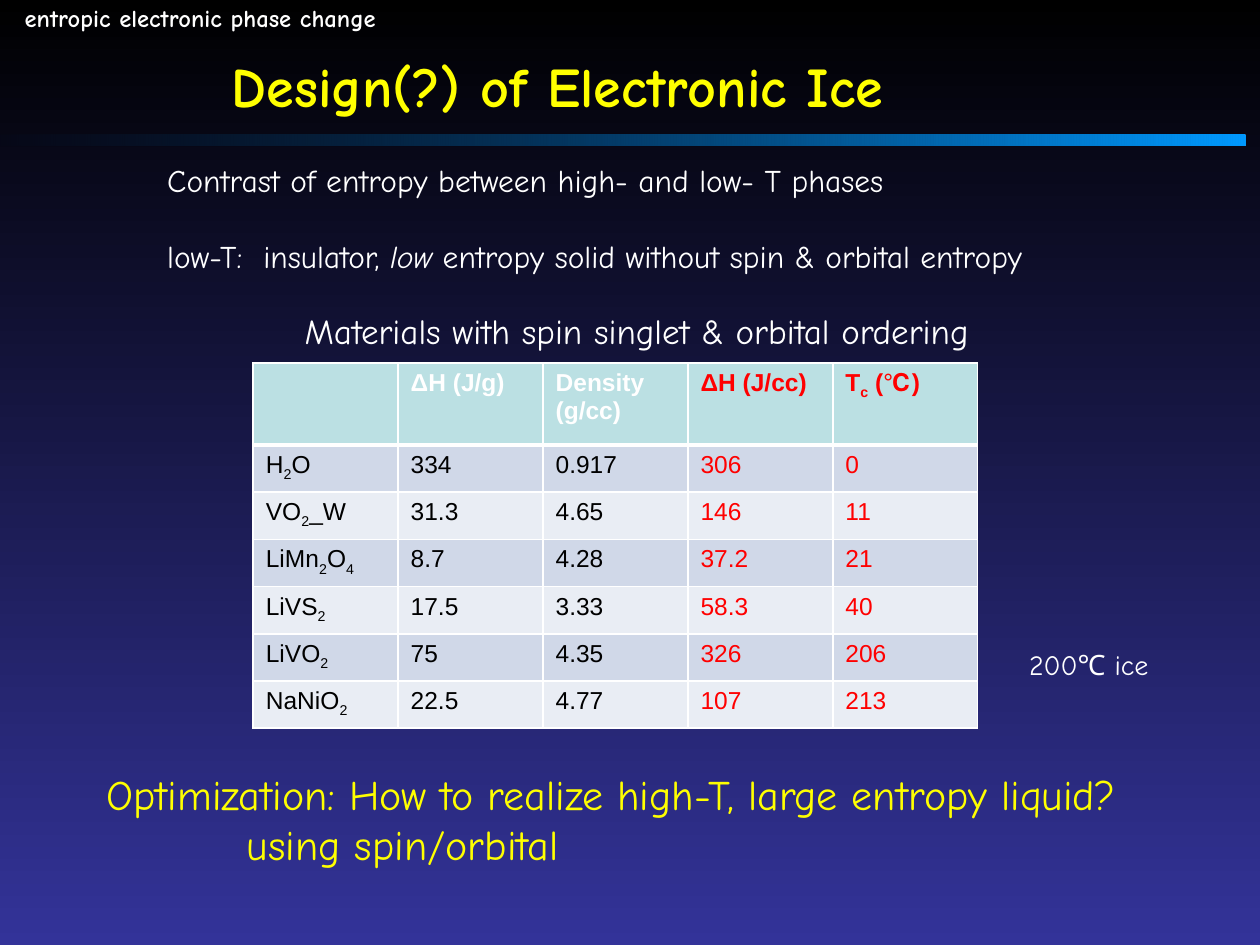
from pptx import Presentation
from pptx import util as u
from pptx.dml.color import RGBColor
from pptx.enum import shapes, text
from pptx.oxml import parse_xml
from pptx.oxml.ns import nsdecls, qn

WHITE, YELLOW, RED, BLACK = "FFFFFF", "FFFF00", "FF0000", "000000"
HEADER_FILL, BAND_FILLS = "BBE0E3", ("D0D8E8", "E9EDF4")
HEADER_HEIGHT, ROW_HEIGHT, COLUMN_WIDTH = 46.8, 27, 82.8
FIRST_RED_COLUMN = 3

# Text between tildes is subscript in the table and italic elsewhere.
MATERIALS = [
    ("", "ΔH (J/g)", "Density (g/cc)", "ΔH (J/cc)", "T~c~ (℃)"),
    ("H~2~O", "334", "0.917", "306", "0"),
    ("VO~2~_W", "31.3", "4.65", "146", "11"),
    ("LiMn~2~O~4~", "8.7", "4.28", "37.2", "21"),
    ("LiVS~2~", "17.5", "3.33", "58.3", "40"),
    ("LiVO~2~", "75", "4.35", "326", "206"),
    ("NaNiO~2~", "22.5", "4.77", "107", "213"),
]


def color(value):
    return RGBColor.from_string(value)


def set_gradient(fill, colors, angle):
    fill.gradient()
    fill.gradient_angle = angle
    for stop, value in zip(fill.gradient_stops, colors):
        stop.color.rgb = color(value)


def set_border(cell, side, width):
    cell._tc.get_or_add_tcPr().append(parse_xml(
        f'<a:ln{side} {nsdecls("a")} w="{u.Pt(width)}"><a:solidFill>'
        f'<a:srgbClr val="{WHITE}"/></a:solidFill></a:ln{side}>'))


class SlideBuilder:
    font, table_font = "Comic Neue", "Arial"

    def __init__(self, slide):
        self.slide = slide

    def background(self, *colors):
        set_gradient(self.slide.background.fill, colors, 270)

    def runs(self, paragraph, content, size, ink, bold=False, in_table=False):
        for index, piece in enumerate(content.split("~")):
            if not piece:
                continue
            run = paragraph.add_run()
            run.text = piece
            run.font.name = self.table_font if in_table else self.font
            run.font.size = u.Pt(size)
            run.font.bold = bold
            run.font.color.rgb = color(ink)
            if index % 2 and in_table:
                run._r.get_or_add_rPr().set("baseline", "-25000")
            elif index % 2:
                run.font.italic = True

    def title(self, box, content, size, ink):
        shape = self.slide.shapes.title
        shape.left, shape.top, shape.width, shape.height = map(u.Pt, box)
        frame = shape.text_frame
        frame.auto_size = text.MSO_AUTO_SIZE.NONE
        frame.vertical_anchor = text.MSO_ANCHOR.TOP
        frame.paragraphs[0].alignment = text.PP_ALIGN.LEFT
        self.runs(frame.paragraphs[0], content, size, ink, bold=True)

    def text_box(self, box, lines, size, ink, bold=False, gap=0, last_indent=0):
        frame = self.slide.shapes.add_textbox(*map(u.Pt, box)).text_frame
        frame.word_wrap = True
        for index, line in enumerate(lines):
            paragraph = frame.add_paragraph() if index else frame.paragraphs[0]
            if index:
                paragraph.space_before = u.Pt(gap)
            self.runs(paragraph, line, size, ink, bold)
        if last_indent:
            paragraph._p.get_or_add_pPr().set("marL", str(u.Pt(last_indent)))

    def fading_bar(self, box, start, end):
        """Add a rounded bar that fades in from a transparent left end."""
        shape = self.slide.shapes.add_shape(
            shapes.MSO_SHAPE.ROUNDED_RECTANGLE, *map(u.Pt, box))
        shape.shadow.inherit = False
        shape.line.fill.background()
        set_gradient(shape.fill, (start, end), 0)
        first_stop = next(shape._element.iter(qn("a:srgbClr")))
        first_stop.append(parse_xml(f'<a:alpha {nsdecls("a")} val="0"/>'))

    def table(self, left, top, rows):
        columns = len(rows[0])
        height = HEADER_HEIGHT + ROW_HEIGHT * (len(rows) - 1)
        table = self.slide.shapes.add_table(
            len(rows), columns, u.Pt(left), u.Pt(top),
            u.Pt(COLUMN_WIDTH * columns), u.Pt(height)).table
        for column in table.columns:
            column.width = u.Pt(COLUMN_WIDTH)
        for row_index, values in enumerate(rows):
            header = row_index == 0
            table.rows[row_index].height = u.Pt(HEADER_HEIGHT if header else ROW_HEIGHT)
            fill = HEADER_FILL if header else BAND_FILLS[(row_index - 1) % 2]
            for column_index, value in enumerate(values):
                cell = table.cell(row_index, column_index)
                for side in "LRTB":
                    thick = (row_index, side) in ((0, "B"), (1, "T"))
                    set_border(cell, side, 3 if thick else 1)
                cell.fill.solid()
                cell.fill.fore_color.rgb = color(fill)
                ink = WHITE if header else BLACK
                if column_index >= FIRST_RED_COLUMN:
                    ink = RED
                self.runs(cell.text_frame.paragraphs[0], value, 14, ink,
                          bold=header, in_table=True)


def main():
    presentation = Presentation()
    presentation.slide_width, presentation.slide_height = u.Pt(720), u.Pt(540)
    title_only = presentation.slide_layouts[5]
    builder = SlideBuilder(presentation.slides.add_slide(title_only))

    builder.background("000000", "333399")
    builder.table(144.7, 207.4, MATERIALS)
    builder.fading_bar((-11.5, 77, 723, 6), "004776", "0099FF")
    builder.title((125.3, 26, 439, 46), "Design(?) of Electronic Ice", 32, YELLOW)
    builder.text_box((167, 173.5, 438, 31.5),
                     ["Materials with spin singlet & orbital ordering"], 20, WHITE)
    builder.text_box((7, -2, 240, 24.5), ["entropic electronic phase change"],
                     14, WHITE, bold=True)
    builder.text_box((88.5, 88.5, 606, 72.7),
                     ["Contrast of entropy between high- and low- T phases",
                      "low-T:  insulator, ~low~ entropy solid without spin & orbital entropy"],
                     18, WHITE, gap=21.7)
    builder.text_box((54, 435.6, 664, 65.5),
                     ["Optimization: How to realize high-T, large entropy liquid?",
                      "using spin/orbital"], 24, YELLOW, last_indent=80)
    builder.text_box((581, 366.5, 86.4, 26.6), ["200℃ ice"], 16, WHITE)
    presentation.save("out.pptx")


if __name__ == "__main__":
    main()
